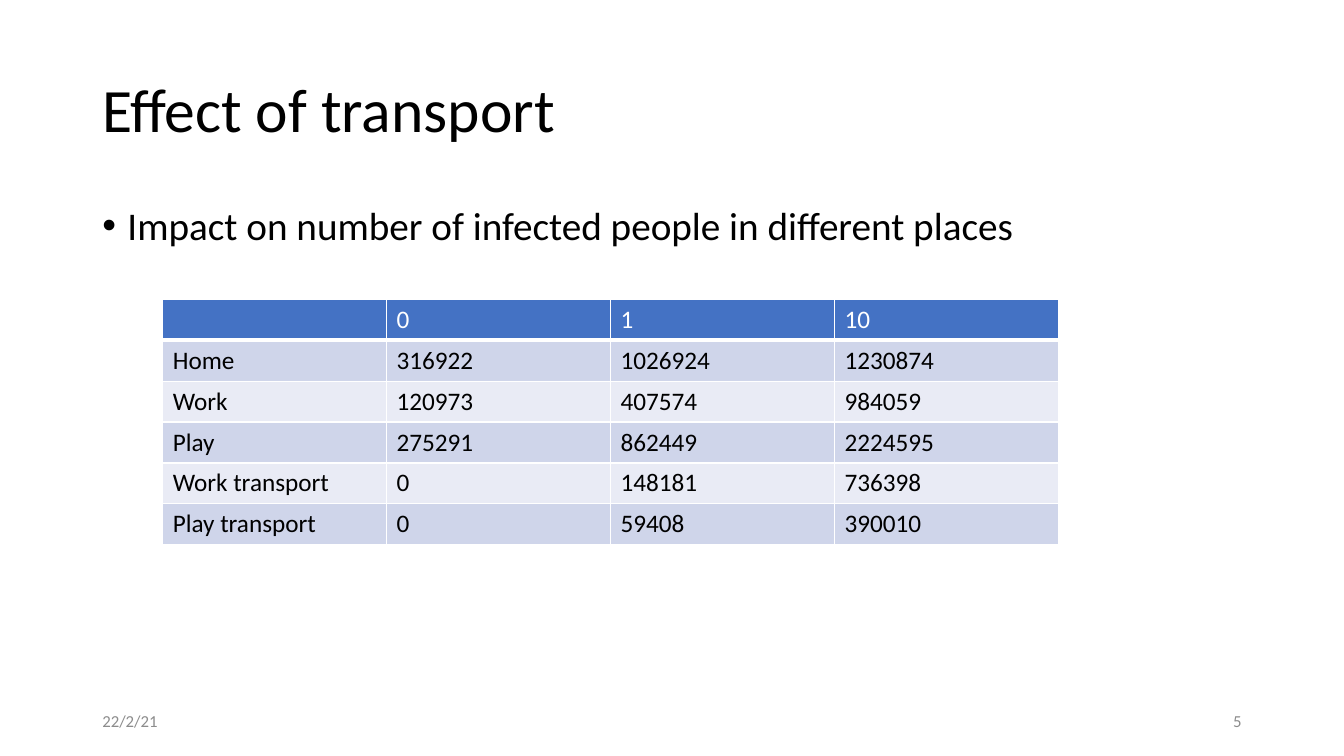
import pptx
import pptx.dml.color
import pptx.enum.text
import pptx.oxml
import pptx.oxml.ns
import pptx.util

PX = 9525  # EMU per px, 96 px to the inch
ALIGN = pptx.enum.text.PP_ALIGN
ANCHOR = pptx.enum.text.MSO_ANCHOR
THEME = {
    "font": "Calibri",
    "black": "000000", "white": "FFFFFF", "grey": "8C8C8C",
    "header": "4472C4", "bands": ("CFD5EA", "E9EBF5"),
    "title": 44, "body": 28, "table": 18, "footer": 12,
}


def style(para, size, color):
    para.font.name = THEME["font"]
    para.font.size = pptx.util.Pt(THEME[size])
    para.font.bold = False
    para.font.color.rgb = pptx.dml.color.RGBColor.from_string(THEME[color])


def add_text(place, text, size, color, anchor=ANCHOR.MIDDLE, align=ALIGN.LEFT):
    box = page.shapes.add_textbox(*(n * PX for n in place))
    box.text_frame.word_wrap = True
    box.text_frame.vertical_anchor = anchor
    para = box.text_frame.paragraphs[0]
    para.text = text
    para.alignment = align
    style(para, size, color)
    return para


deck = pptx.Presentation()
deck.slide_width, deck.slide_height = 1280 * PX, 720 * PX
page = deck.slides.add_slide(deck.slide_layouts[6])

# Title
title = add_text((88, 38, 1104, 139), "Effect of transport", "title", "black")
title.line_spacing = 0.9

# Bullet point
point = add_text((88, 192, 1104, 457),
                 "Impact on number of infected people in different places",
                 "body", "black", ANCHOR.TOP)
point.line_spacing = 0.9
point.space_before = pptx.util.Pt(10)
props = point._p.get_or_add_pPr()
props.set("marL", str(24 * PX))
props.set("indent", str(-24 * PX))
namespace = pptx.oxml.ns.nsdecls("a")
bullet_xml = (f'<a:buFont {namespace} typeface="Arial"/>',
              f'<a:buChar {namespace} char="•"/>')
default_font = props.find(pptx.oxml.ns.qn("a:defRPr"))
for xml in bullet_xml:
    default_font.addprevious(pptx.oxml.parse_xml(xml))

# Table of infections by place
rows = [
    ("", "0", "1", "10"),
    ("Home", "316922", "1026924", "1230874"),
    ("Work", "120973", "407574", "984059"),
    ("Play", "275291", "862449", "2224595"),
    ("Work transport", "0", "148181", "736398"),
    ("Play transport", "0", "59408", "390010"),
]
table = page.shapes.add_table(len(rows), len(rows[0]), 155 * PX, 285 * PX,
                              853 * PX, 39 * len(rows) * PX).table
for r, values in enumerate(rows):
    is_header = r == 0
    fill = THEME["header"] if is_header else THEME["bands"][(r - 1) % 2]
    for c, value in enumerate(values):
        cell = table.cell(r, c)
        cell.text = value
        style(cell.text_frame.paragraphs[0], "table",
              "white" if is_header else "black")
        # Borders come before the fill in the cell properties
        cell_props = cell._tc.get_or_add_tcPr()
        for side in "LRTB":
            width = pptx.util.Pt(3 if is_header and side == "B" else 1)
            cell_props.append(pptx.oxml.parse_xml(
                f'<a:ln{side} {namespace} w="{width}"><a:solidFill>'
                f'<a:srgbClr val="{THEME["white"]}"/></a:solidFill></a:ln{side}>'))
        cell.fill.solid()
        cell.fill.fore_color.rgb = pptx.dml.color.RGBColor.from_string(fill)

# Date and page number
add_text((88, 667, 288, 38), "22/2/21", "footer", "grey")
add_text((904, 667, 288, 38), "5", "footer", "grey", align=ALIGN.RIGHT)

deck.save("out.pptx")
